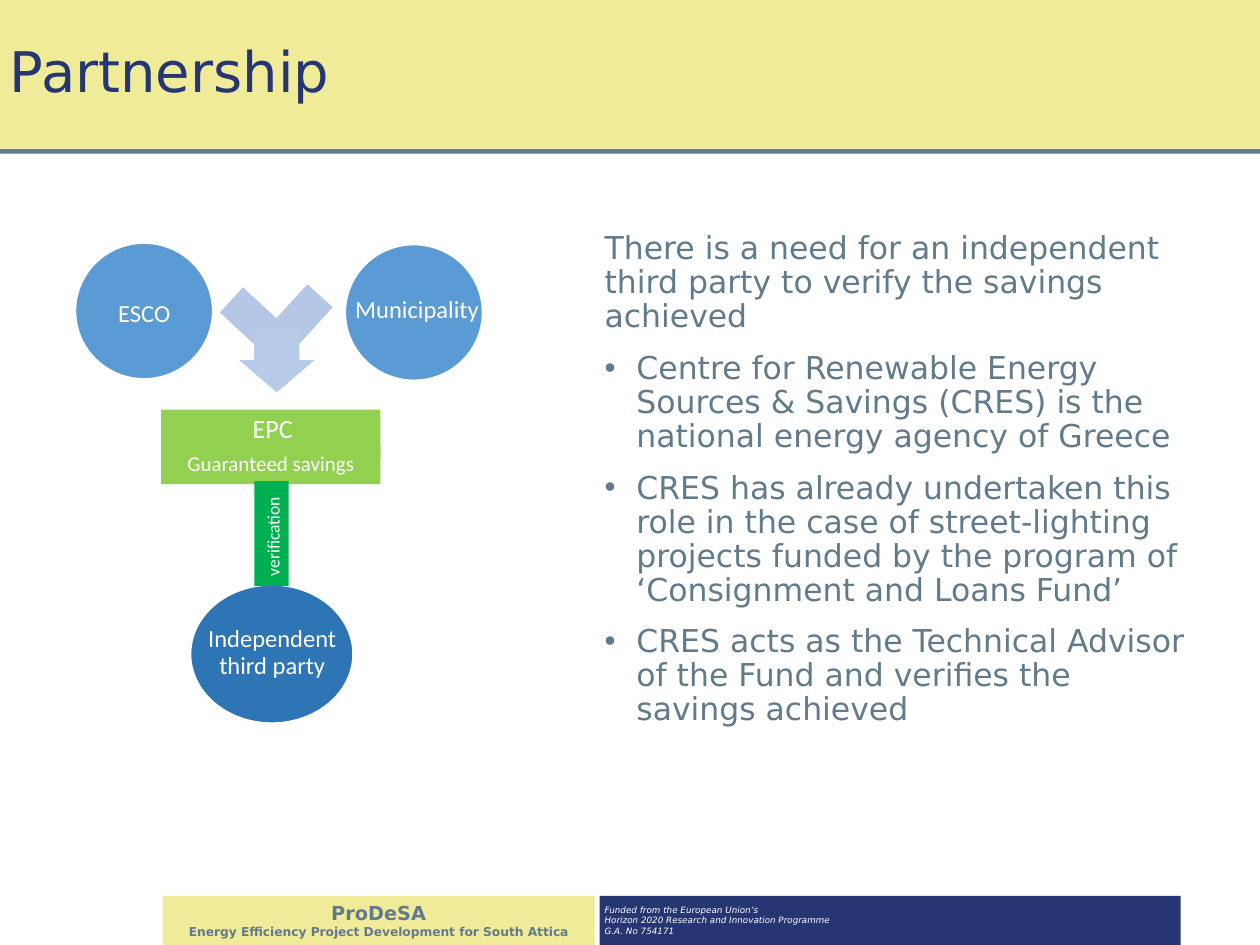
from dataclasses import dataclass
from typing import Optional

from lxml import etree
from pptx import Presentation
from pptx import util as u
from pptx.dml.color import RGBColor
from pptx.enum import shapes, text
from pptx.oxml.ns import qn

KIND = shapes.MSO_SHAPE
ALIGN = text.PP_ALIGN
ANCHOR = text.MSO_ANCHOR


@dataclass(frozen=True)
class Theme:
    heading_font: str = "DejaVu Sans"
    diagram_font: str = "Calibri"
    navy: str = "263673"
    slate: str = "627B8B"
    cream: str = "F0EB99"
    white: str = "FFFFFF"
    partner: str = "5B9BD5"
    verifier: str = "2E75B6"
    arm: str = "B4C7E7"
    arrow: str = "B5CBE7"
    contract: str = "92D050"
    verification: str = "00B050"
    title: float = 32
    body: float = 18
    contract_size: float = 15
    label: float = 14
    detail: float = 12
    project: float = 11
    small: float = 10
    tagline: float = 7
    funding: float = 5


THEME = Theme()


@dataclass(frozen=True)
class Box:
    """Left, top, width and height in centimetres, rotation in degrees."""
    left: float
    top: float
    width: float
    height: float
    rotation: float = 0

    def lengths(self) -> list:
        return [u.Cm(v) for v in (self.left, self.top, self.width, self.height)]


@dataclass(frozen=True)
class Block:
    box: Box
    fill: str
    kind: int = KIND.RECTANGLE
    outline: Optional[str] = None


@dataclass(frozen=True)
class Label:
    wording: str
    box: Box
    size: float = THEME.label


def add_block(slide, block: Block):
    shape = slide.shapes.add_shape(block.kind, *block.box.lengths())
    shape.shadow.inherit = False
    shape.rotation = block.box.rotation
    shape.fill.solid()
    shape.fill.fore_color.rgb = RGBColor.from_string(block.fill)
    if block.outline:
        shape.line.color.rgb = RGBColor.from_string(block.outline)
        shape.line.width = u.Pt(1)
    else:
        shape.line.fill.background()
    return shape


def add_text_box(slide, box: Box):
    shape = slide.shapes.add_textbox(*box.lengths())
    shape.rotation = box.rotation
    return shape


def set_frame(shape, insets: tuple, anchor=ANCHOR.MIDDLE):
    frame = shape.text_frame
    frame.word_wrap = True
    frame.vertical_anchor = anchor
    (frame.margin_left, frame.margin_top,
     frame.margin_right, frame.margin_bottom) = [u.Cm(v) for v in insets]
    return frame


def write(frame, wording: str, *, size: float, color: str, font: str = THEME.heading_font,
          align=ALIGN.LEFT, bold: bool = False, italic: bool = False,
          spacing: float = 1.0, before: float = 0, bullet: bool = False) -> None:
    """Fill the empty first paragraph, or add another one."""
    first = not frame.text
    paragraph = frame.paragraphs[0] if first else frame.add_paragraph()
    paragraph.alignment = align
    paragraph.line_spacing = spacing
    paragraph.space_before = u.Pt(0 if first else before)
    if bullet:
        properties = paragraph._p.get_or_add_pPr()
        properties.set("marL", str(u.Cm(0.64)))
        properties.set("indent", str(-u.Cm(0.64)))
        etree.SubElement(properties, qn("a:buFont")).set("typeface", "Arial")
        etree.SubElement(properties, qn("a:buChar")).set("char", "•")
    run = paragraph.add_run()
    run.text = wording
    run.font.name = font
    run.font.size = u.Pt(size)
    run.font.bold = bold
    run.font.italic = italic
    run.font.color.rgb = RGBColor.from_string(color)


def add_label(slide, label: Label) -> None:
    frame = set_frame(add_text_box(slide, label.box), (0.05,) * 4)
    write(frame, label.wording, size=label.size, color=THEME.white,
          font=THEME.diagram_font, align=ALIGN.CENTER, spacing=0.9)


def draw_header(slide) -> None:
    add_block(slide, Block(Box(0, 3, 25.4, 0.1), THEME.slate))
    band = add_block(slide, Block(Box(0, 0, 25.4, 3), THEME.cream))
    write(set_frame(band, (0.2,) * 4), "Partnership",
          size=THEME.title, color=THEME.navy, spacing=0.9)


def draw_body(slide) -> None:
    body = add_text_box(slide, Box(11.99, 4.09, 12.19, 11.3))
    frame = set_frame(body, (0.2, 0.6, 0.2, 0.2), ANCHOR.TOP)
    lead = "There is a need for an independent third party to verify the savings achieved"
    points = (
        "Centre for Renewable Energy Sources & Savings (CRES) is the national energy "
        "agency of Greece",
        "CRES has already undertaken this role in the case of street-lighting projects "
        "funded by the program of ‘Consignment and Loans Fund’",
        "CRES acts as the Technical Advisor of the Fund and verifies the savings achieved",
    )
    for wording in (lead, *points):
        write(frame, wording, size=THEME.body, color=THEME.slate, spacing=0.9,
              before=10, bullet=wording != lead)


def draw_footer(slide) -> None:
    top, height, insets = 18.06, 0.99, (0.1,) * 4
    project = add_block(slide, Block(Box(3.28, top, 8.71, height), THEME.cream))
    frame = set_frame(project, insets)
    for wording, size in (
            ("ProDeSA", THEME.project),
            ("Energy Efficiency Project Development for South Attica", THEME.tagline)):
        write(frame, wording, size=size, color=THEME.slate, bold=True, align=ALIGN.CENTER)

    funding = add_block(slide, Block(Box(12.09, top, 11.71, height), THEME.navy))
    frame = set_frame(funding, insets)
    for wording in ("Funded from the European Union’s",
                    "Horizon 2020 Research and Innovation Programme",
                    "G.A. No 754171"):
        write(frame, wording, size=THEME.funding, color=THEME.white, italic=True)


def draw_diagram(slide) -> None:
    # Partners, joining arrow and contract
    for block in (
            Block(Box(1.52, 4.9, 2.77, 2.74), THEME.partner, KIND.OVAL, THEME.white),
            Block(Box(6.96, 4.93, 2.77, 2.74), THEME.partner, KIND.OVAL, THEME.white),
            Block(Box(3.25, 8.26, 4.42, 0.99), THEME.contract),
            Block(Box(5.74, 5.82, 0.69, 1.09, 42.3), THEME.arm),
            Block(Box(4.72, 5.87, 0.69, 1.09, 312.7), THEME.arm),
            Block(Box(3.84, 11.79, 3.28, 2.79), THEME.verifier, KIND.OVAL, THEME.white)):
        add_block(slide, block)
    arrow = add_block(slide, Block(Box(4.93, 6.5, 1.3, 1.52, 90), THEME.arrow,
                                   KIND.RIGHT_ARROW))
    arrow.adjustments[0], arrow.adjustments[1] = 0.6, 0.5

    # Savings guarantee and verification link
    savings = add_block(slide, Block(Box(3.25, 8.97, 4.42, 0.79), THEME.contract))
    add_block(slide, Block(Box(5.13, 9.7, 0.69, 2.11), THEME.verification))
    link = add_text_box(slide, Box(4.27, 10.29, 2.46, 0.69, 270))
    insets = (0.25, 0.13, 0.25, 0.13)
    write(set_frame(savings, insets), "Guaranteed savings", size=THEME.detail,
          color=THEME.white, font=THEME.diagram_font, align=ALIGN.CENTER, spacing=0.9)
    write(set_frame(link, insets, ANCHOR.TOP), "verification", size=THEME.small,
          color=THEME.white, font=THEME.diagram_font)

    # Labels
    for label in (
            Label("ESCO", Box(1.45, 4.88, 2.92, 2.92)),
            Label("Municipality", Box(6.95, 4.8, 2.92, 2.92)),
            Label("EPC", Box(3.25, 7.54, 4.5, 2.26), THEME.contract_size),
            Label("Independent third party", Box(3.99, 11.91, 3, 2.51))):
        add_label(slide, label)


def main() -> None:
    deck = Presentation()
    deck.slide_width, deck.slide_height = u.Cm(25.4), u.Cm(19.05)
    slide = deck.slides.add_slide(deck.slide_layouts[6])
    draw_header(slide)
    draw_body(slide)
    draw_footer(slide)
    draw_diagram(slide)
    deck.save("out.pptx")


if __name__ == "__main__":
    main()
